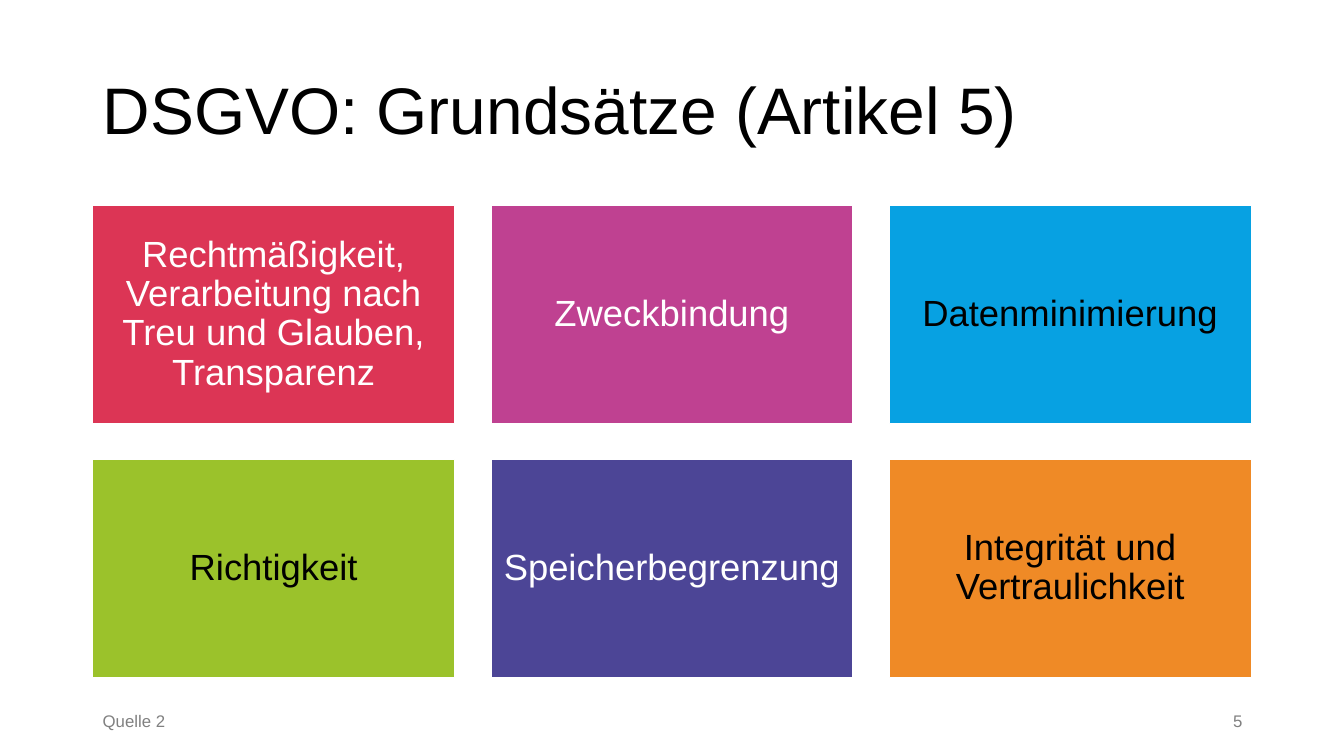
from pptx import Presentation
from pptx import util as u
from pptx.dml.color import RGBColor
from pptx.enum import shapes, text

COLOURS = {
    "red": "DC3555",
    "magenta": "BF4191",
    "blue": "07A1E2",
    "green": "9BC22B",
    "violet": "4C4596",
    "orange": "EF8A26",
    "white": "FFFFFF",
    "black": "000000",
    "grey": "808080",
}

PRINCIPLES = [
    ("Rechtmäßigkeit, Verarbeitung nach Treu und Glauben, Transparenz", "red", "white"),
    ("Zweckbindung", "magenta", "white"),
    ("Datenminimierung", "blue", "black"),
    ("Richtigkeit", "green", "black"),
    ("Speicherbegrenzung", "violet", "white"),
    ("Integrität und Vertraulichkeit", "orange", "black"),
]

COLUMNS = 3
GRID_LEFT, GRID_TOP = 0.92, 2.04
TILE_WIDTH, TILE_HEIGHT = 3.59, 2.16
GAP = 0.36

TILE_MARGINS = {
    f"margin_{side}": u.Inches(0.11) for side in ("left", "top", "right", "bottom")
}


def colour(name):
    return RGBColor.from_string(COLOURS[name])


def apply_format(target, values):
    for name, value in values.items():
        setattr(target, name, value)


def write_text(shape, wording, size, colour_name, frame_format, paragraph_format):
    frame = shape.text_frame
    apply_format(frame, {"word_wrap": True, **frame_format})
    paragraph = frame.paragraphs[0]
    apply_format(paragraph, paragraph_format)
    run = paragraph.add_run()
    run.text = wording
    apply_format(run.font, {"name": "Arial", "size": u.Pt(size)})
    run.font.color.rgb = colour(colour_name)


def add_label(slide, place, wording, size, colour_name, frame_format, paragraph_format):
    shape = slide.shapes.add_textbox(*map(u.Inches, place))
    write_text(shape, wording, size, colour_name, frame_format, paragraph_format)


def add_tile(slide, index, wording, fill_name, text_name):
    row, column = divmod(index, COLUMNS)
    place = (
        GRID_LEFT + column * (TILE_WIDTH + GAP),
        GRID_TOP + row * (TILE_HEIGHT + GAP),
        TILE_WIDTH,
        TILE_HEIGHT,
    )
    shape = slide.shapes.add_shape(
        shapes.MSO_SHAPE.RECTANGLE, *map(u.Inches, place)
    )
    shape.shadow.inherit = False
    shape.fill.solid()
    shape.fill.fore_color.rgb = colour(fill_name)
    shape.line.color.rgb = colour("white")
    shape.line.width = u.Pt(1)
    write_text(
        shape, wording, 26, text_name,
        {"vertical_anchor": text.MSO_ANCHOR.MIDDLE, **TILE_MARGINS},
        {"alignment": text.PP_ALIGN.CENTER, "line_spacing": 0.9},
    )


def main():
    presentation = Presentation()
    presentation.slide_width = u.Inches(13.33)
    presentation.slide_height = u.Inches(7.5)
    slide = presentation.slides.add_slide(presentation.slide_layouts[6])
    middle = {"vertical_anchor": text.MSO_ANCHOR.MIDDLE}

    add_label(slide, (0.92, 0.4, 11.5, 1.45), "DSGVO: Grundsätze (Artikel 5)",
              47, "black", middle, {"line_spacing": 0.9})
    for index, principle in enumerate(PRINCIPLES):
        add_tile(slide, index, *principle)
    add_label(slide, (0.92, 7, 2.53, 0.3), "Quelle 2", 12, "grey",
              {"auto_size": text.MSO_AUTO_SIZE.SHAPE_TO_FIT_TEXT}, {})
    add_label(slide, (9.42, 6.95, 3, 0.4), "5", 12, "grey",
              middle, {"alignment": text.PP_ALIGN.RIGHT})

    presentation.save("out.pptx")


if __name__ == "__main__":
    main()
